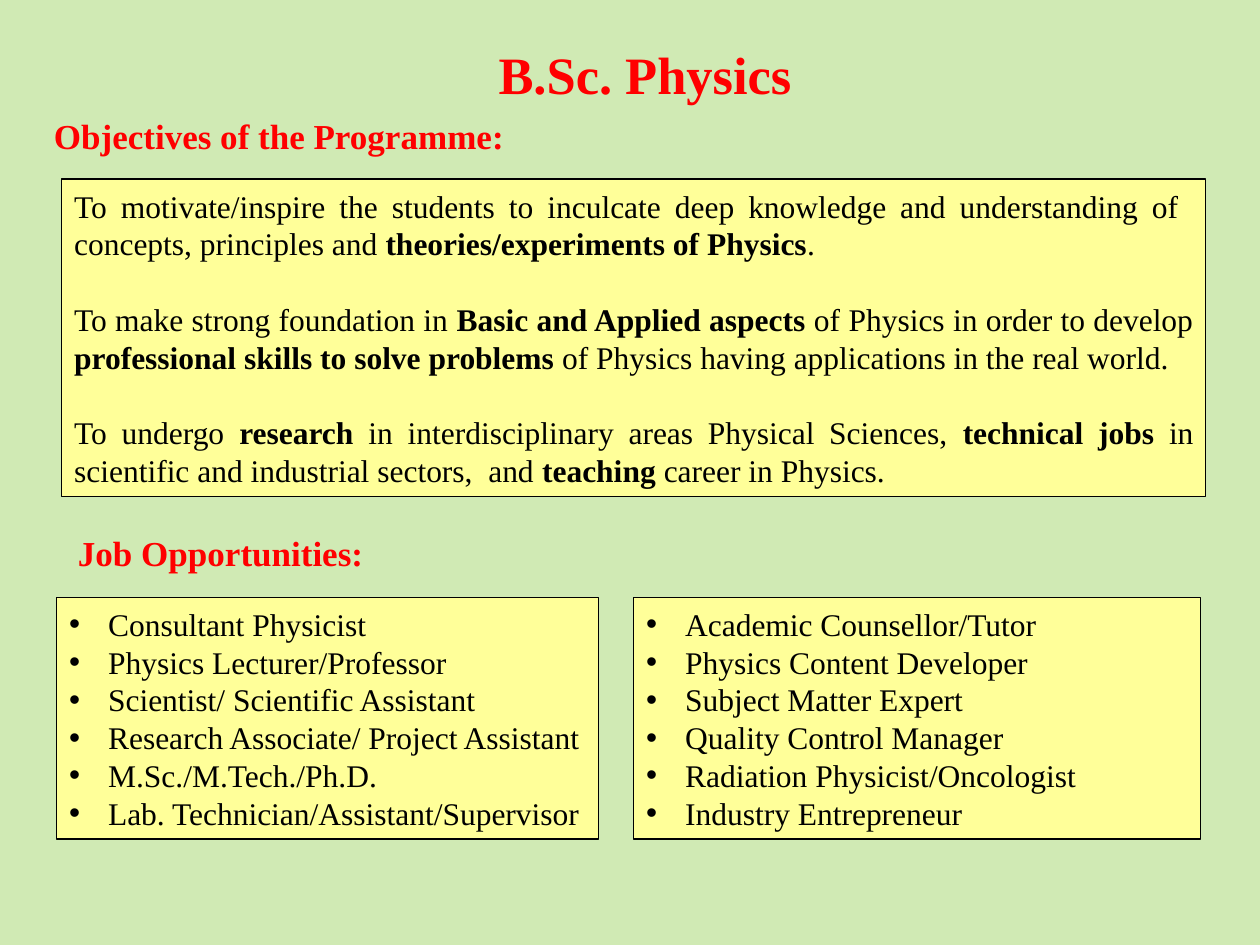
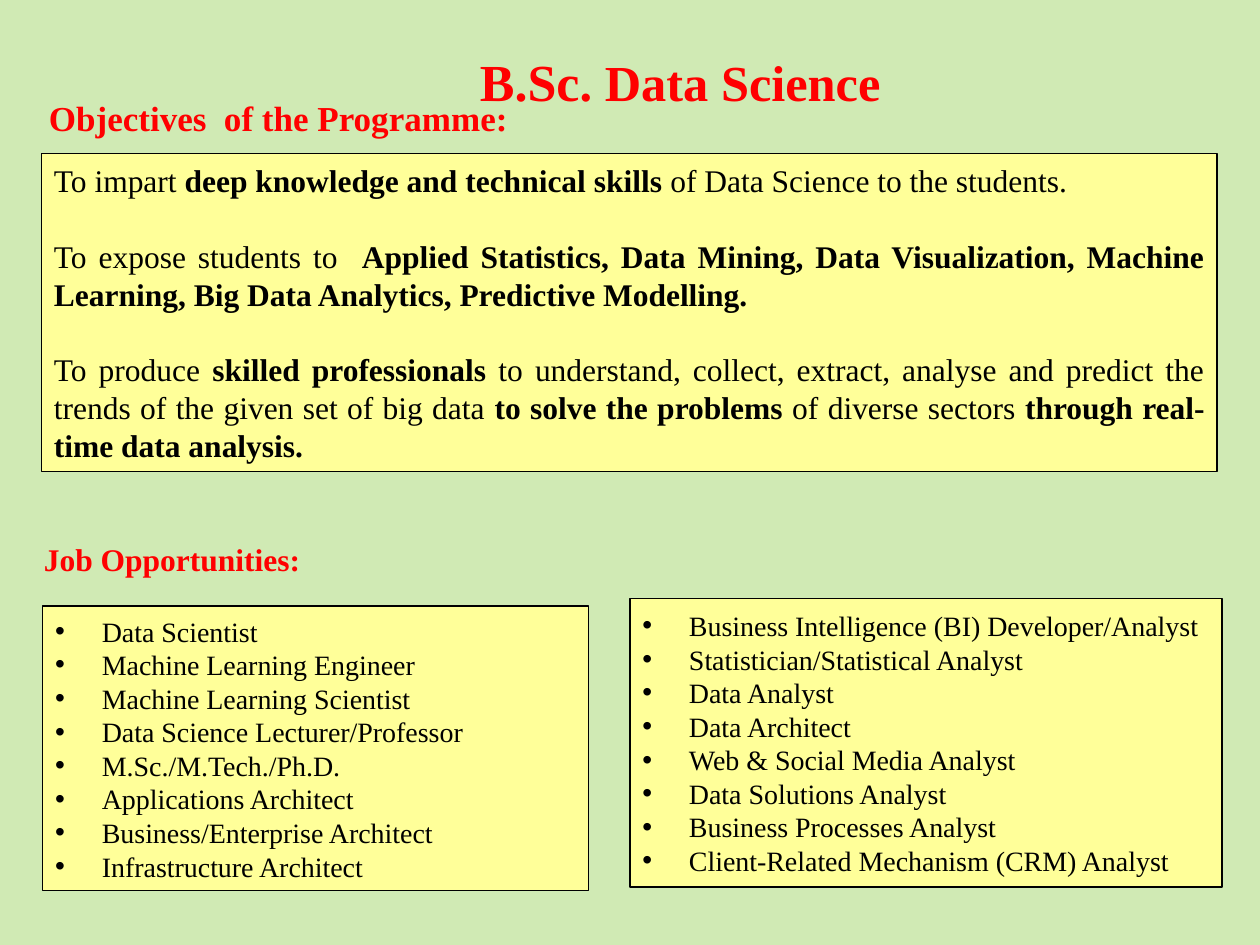
import pptx
import pptx.dml.color
import pptx.enum.shapes
import pptx.enum.text
import pptx.oxml.ns
import pptx.util
from lxml import etree

RGBColor = pptx.dml.color.RGBColor
PALE_GREEN = RGBColor(0xD0, 0xEA, 0xB4)
PALE_YELLOW = RGBColor(0xFF, 0xFF, 0x99)
RED = RGBColor(0xFF, 0x00, 0x00)
BLACK = RGBColor(0x00, 0x00, 0x00)
ALIGN = pptx.enum.text.PP_ALIGN
ANCHOR = pptx.enum.text.MSO_ANCHOR
COLUMNS, ROWS = 100, 75

PROGRAMMES = [
    dict(
        title=[("B.Sc. Physics", 30)],
        title_at=(38.3, 2.5, 25.8, 6.7),
        title_format=dict(align=ALIGN.CENTER),
        objectives_heading="Objectives of the Programme:",
        objectives_heading_at=(3.3, 8.6, 38.7, 4.4),
        objectives_at=(4.9, 14.2, 90.8, 25.2),
        objectives=[
            "To motivate/inspire the students to inculcate deep knowledge and understanding of  "
            "concepts, principles and **theories/experiments of Physics**.",
            "To make strong foundation in **Basic and Applied aspects** of Physics in order to develop "
            "**professional skills to solve problems** of Physics having applications in the real world.",
            "To undergo **research **in interdisciplinary areas Physical Sciences, **technical jobs **in "
            "scientific and industrial sectors,  and **teaching **career in Physics.",
        ],
        jobs_heading_at=(5.2, 41.7, 25.5, 4.4),
        jobs_heading_size=20,
        jobs_size=18,
        jobs_indent=0.31,
        jobs=[
            ((4.5, 47.4, 43, 19.2), [
                "Consultant Physicist",
                "Physics Lecturer/Professor",
                "Scientist/ Scientific Assistant",
                "Research Associate/ Project Assistant",
                "M.Sc./M.Tech./Ph.D.",
                "Lab. Technician/Assistant/Supervisor",
            ]),
            ((50.3, 47.4, 45, 19.2), [
                "Academic Counsellor/Tutor",
                "Physics Content Developer",
                "Subject Matter Expert",
                "Quality Control Manager",
                "Radiation Physicist/Oncologist",
                "Industry Entrepreneur",
            ]),
        ],
    ),
    dict(
        title=[("B.Sc", 29.7), (". Data Science", 28.8)],
        title_at=(33.3, 3.1, 38.9, 6.7),
        title_format=dict(margin=0.38),
        objectives_heading="Objectives  of the Programme:",
        objectives_heading_at=(2.9, 7.2, 39.4, 4.4),
        objectives_at=(3.3, 12.2, 93.3, 25.2),
        objectives=[
            "To impart **deep knowledge and technical skills** of Data Science to the students.",
            "To expose students to  **Applied Statistics, Data Mining, Data Visualization, Machine "
            "Learning, Big Data Analytics, Predictive Modelling.**",
            "To produce **skilled professionals** to understand, collect, extract, analyse and predict the "
            "trends of the given set of big data **to solve the problems** of diverse sectors "
            "**through real-time data analysis.**",
        ],
        jobs_heading_at=(2.5, 42.4, 23.2, 4),
        jobs_heading_size=18,
        jobs_size=16,
        jobs_indent=0.37,
        jobs=[
            ((3.4, 48.1, 43.3, 22.6), [
                "Data Scientist",
                "Machine Learning Engineer",
                "Machine Learning Scientist",
                "Data Science Lecturer/Professor",
                "M.Sc./M.Tech./Ph.D.",
                "Applications Architect",
                "Business/Enterprise Architect",
                "Infrastructure Architect",
            ]),
            ((50, 47.5, 47, 22.9), [
                "Business Intelligence (BI) Developer/Analyst",
                "Statistician/Statistical Analyst",
                "Data Analyst",
                "Data Architect",
                "Web & Social Media Analyst",
                "Data Solutions Analyst",
                "Business Processes Analyst",
                "Client-Related Mechanism (CRM) Analyst",
            ]),
        ],
    ),
]


def add_text(p, text, size=18, color=BLACK, bold=False, font="Times New Roman"):
    for i, part in enumerate(text.split("**")):
        if part:
            r = p.add_run()
            r.text = part
            r.font.name = font
            r.font.size = pptx.util.Pt(size)
            r.font.color.rgb = color
            r.font.bold = bold or i % 2 == 1


def set_margin(p, margin, bullet=None):
    pPr = p._p.get_or_add_pPr()
    pPr.set("marL", str(pptx.util.Inches(margin)))
    pPr.set("indent", str(-pptx.util.Inches(margin) if bullet else 0))
    if bullet:
        qn = pptx.oxml.ns.qn
        etree.SubElement(pPr, qn("a:buFont")).set("typeface", "Arial")
        etree.SubElement(pPr, qn("a:buChar")).set("char", bullet)


class Deck:
    def __init__(self):
        self.prs = pptx.Presentation()
        self.prs.slide_width = pptx.util.Inches(10)
        self.prs.slide_height = pptx.util.Inches(7.5)
        self.s = None

    def new_slide(self):
        self.s = self.prs.slides.add_slide(self.prs.slide_layouts[6])
        fill = self.s.background.fill
        fill.solid()
        fill.fore_color.rgb = PALE_GREEN

    def place(self, at):
        col = self.prs.slide_width / COLUMNS
        row = self.prs.slide_height / ROWS
        return [round(n * unit) for n, unit in zip(at, (col, row, col, row))]

    def label(self, at, runs, anchor=ANCHOR.TOP, align=ALIGN.LEFT, margin=0):
        tf = self.s.shapes.add_textbox(*self.place(at)).text_frame
        tf.word_wrap = True
        tf.vertical_anchor = anchor
        p = tf.paragraphs[0]
        p.alignment = align
        set_margin(p, margin)
        for text, size in runs:
            add_text(p, text, size=size, color=RED, bold=True)

    def panel(self, at, lines, size=18, align=ALIGN.LEFT, gap=0, indent=0):
        sp = self.s.shapes.add_shape(pptx.enum.shapes.MSO_SHAPE.RECTANGLE, *self.place(at))
        sp.shadow.inherit = False
        sp.fill.solid()
        sp.fill.fore_color.rgb = PALE_YELLOW
        sp.line.color.rgb = BLACK
        sp.line.width = pptx.util.Pt(0.75)
        tf = sp.text_frame
        tf.word_wrap = True
        tf.vertical_anchor = ANCHOR.MIDDLE
        for i, line in enumerate(lines):
            p = tf.add_paragraph() if i else tf.paragraphs[0]
            p.alignment = align
            if i and gap:
                p.space_before = pptx.util.Pt(gap)
            if indent:
                set_margin(p, indent, bullet="•")
            add_text(p, line, size=size)

    def programme(self, d):
        self.new_slide()
        self.label(d["title_at"], d["title"], anchor=ANCHOR.MIDDLE, **d["title_format"])
        self.label(d["objectives_heading_at"], [(d["objectives_heading"], 20)])
        self.panel(d["objectives_at"], d["objectives"], align=ALIGN.JUSTIFY, gap=21.6)
        self.label(d["jobs_heading_at"], [("Job Opportunities:", d["jobs_heading_size"])])
        for at, jobs in d["jobs"]:
            self.panel(at, jobs, size=d["jobs_size"], indent=d["jobs_indent"])


def main():
    deck = Deck()
    for d in PROGRAMMES:
        deck.programme(d)
    deck.prs.save("out.pptx")


if __name__ == "__main__":
    main()
